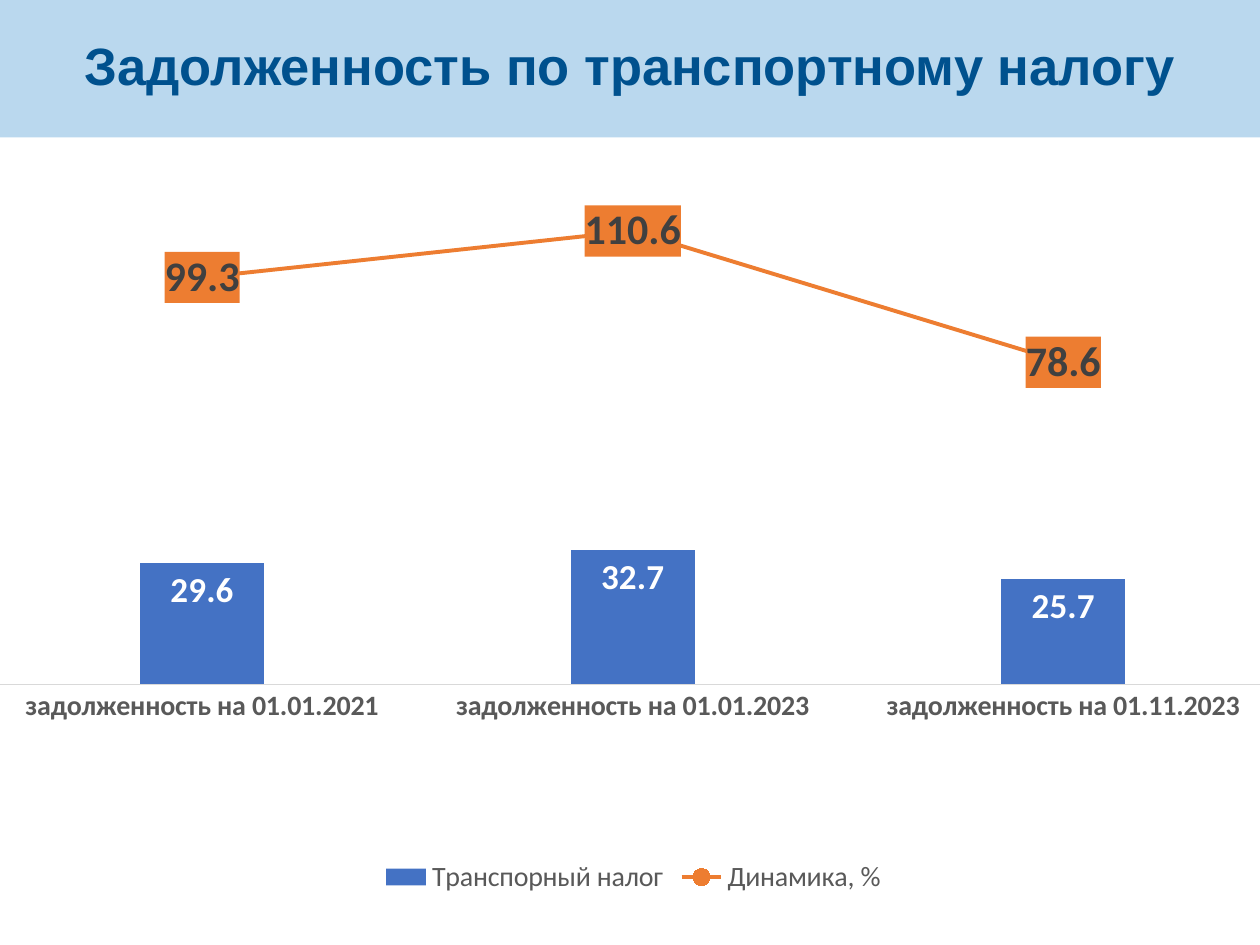
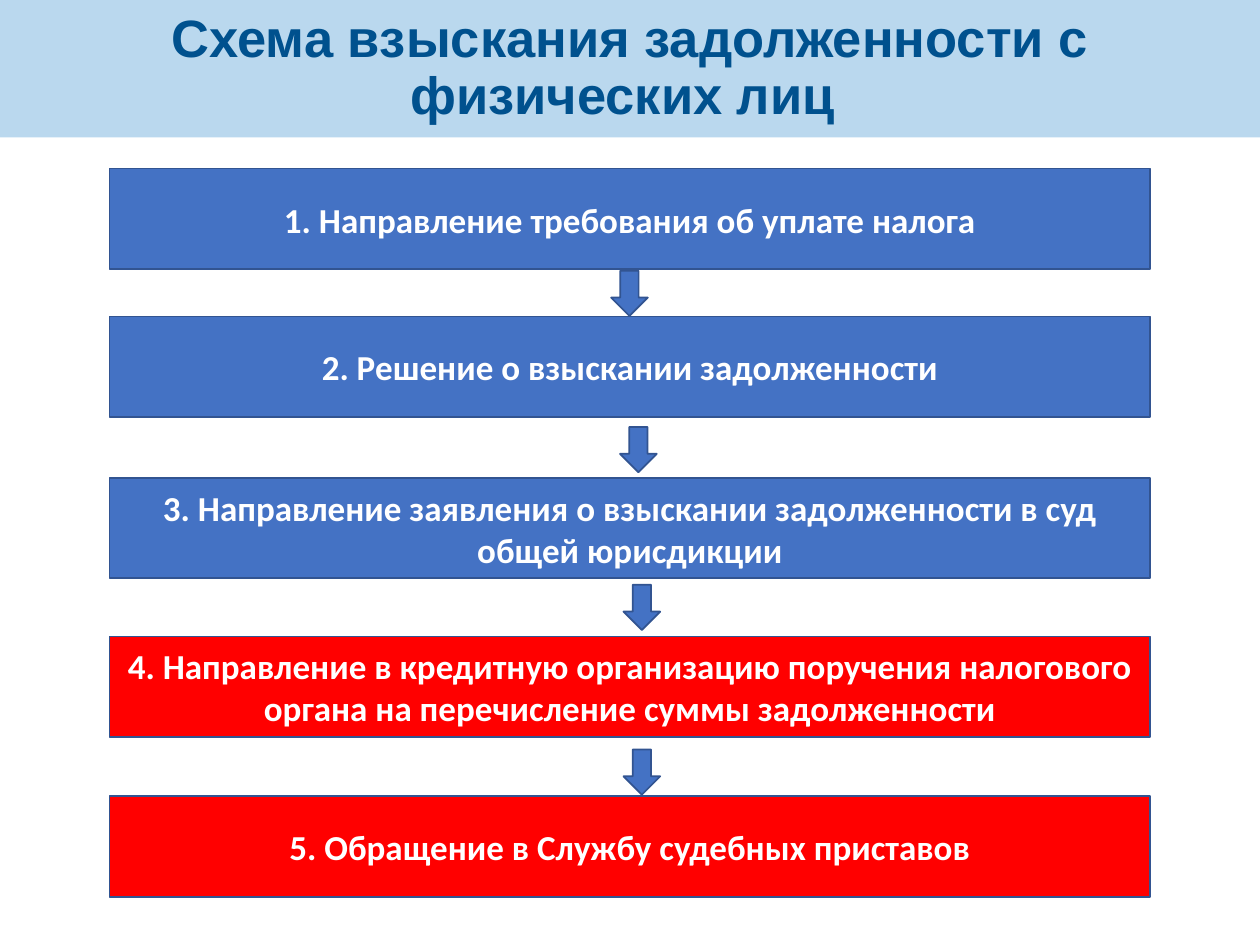
import pptx
import pptx.chart.data
import pptx.dml.color
import pptx.enum.chart
import pptx.enum.shapes
import pptx.enum.text
import pptx.oxml
import pptx.oxml.ns
import pptx.util

Cm, Pt = pptx.util.Cm, pptx.util.Pt
RGBColor = pptx.dml.color.RGBColor
MSO_SHAPE = pptx.enum.shapes.MSO_SHAPE
MSO_ANCHOR = pptx.enum.text.MSO_ANCHOR
PP_ALIGN = pptx.enum.text.PP_ALIGN
XL = pptx.enum.chart
qn = pptx.oxml.ns.qn

BAND = RGBColor(0xBA, 0xD8, 0xEE)
NAVY = RGBColor(0x00, 0x51, 0x8E)
BLUE = RGBColor(0x44, 0x72, 0xC4)
EDGE = RGBColor(0x32, 0x54, 0x91)
RED = RGBColor(0xFF, 0x00, 0x00)
ORANGE = RGBColor(0xED, 0x7D, 0x31)
WHITE = RGBColor(0xFF, 0xFF, 0xFF)
GRAY = RGBColor(0x59, 0x59, 0x59)
DARK = RGBColor(0x40, 0x40, 0x40)
PALE = RGBColor(0xD9, 0xD9, 0xD9)

SLIDE_WIDTH, SLIDE_HEIGHT = 25.4, 19.05
BAND_HEIGHT = 2.77
NAMESPACES = pptx.oxml.ns.nsdecls("c", "a")

CATEGORIES = [
    "задолженность на 01.01.2021",
    "задолженность на 01.01.2023",
    "задолженность на 01.11.2023",
]
DEBT = ("Транспорный налог", [29.6, 32.7, 25.7])
DYNAMICS = ("Динамика, %", [99.3, 110.6, 78.6])

# Step text, fill, top of the box within the scheme
STEPS = [
    ("1. Направление требования об уплате налога", BLUE, 0),
    ("2. Решение о взыскании задолженности", BLUE, 2.98),
    ("3. Направление заявления о взыскании задолженности в суд общей юрисдикции",
     BLUE, 6.23),
    ("4. Направление в кредитную организацию поручения налогового органа "
     "на перечисление суммы задолженности", RED, 9.43),
    ("5. Обращение в Службу судебных приставов", RED, 12.65),
]
# Left and top of each arrow within the scheme
ARROWS = [(10.11, 2.06), (10.29, 5.21), (10.36, 8.39), (10.36, 11.71)]


def style_font(font, size, color, bold=False, name="Calibri"):
    font.name, font.size, font.bold = name, Pt(size), bold
    font.color.rgb = color


def write(frame, text, size, color, name="Calibri"):
    frame.word_wrap = True
    frame.vertical_anchor = MSO_ANCHOR.MIDDLE
    para = frame.paragraphs[0]
    para.alignment = PP_ALIGN.CENTER
    span = para.add_run()
    span.text = text
    style_font(span.font, size, color, True, name)
    return para


def add_page(deck, heading):
    """Title-only page with the heading in a full-width band."""
    page = deck.slides.add_slide(deck.slide_layouts[5])
    title = page.shapes.title
    title.left, title.top = Cm(0), Cm(0)
    title.width, title.height = Cm(SLIDE_WIDTH), Cm(BAND_HEIGHT)
    title.fill.solid()
    title.fill.fore_color.rgb = BAND
    title.text_frame.auto_size = pptx.enum.text.MSO_AUTO_SIZE.NONE
    write(title.text_frame, heading, 30, NAVY, "Arial").line_spacing = 0.9
    return page


def add_block(page, kind, left, top, width, height, fill):
    block = page.shapes.add_shape(kind, Cm(left), Cm(top), Cm(width), Cm(height))
    block.shadow.inherit = False
    block.fill.solid()
    block.fill.fore_color.rgb = fill
    block.line.color.rgb = EDGE
    block.line.width = Pt(1)
    return block


def move_last_series_to_line(chart):
    """Put the last column series on a line that shares the same axes."""
    bars = chart.plots[0]._element
    line = pptx.oxml.parse_xml(
        f'<c:lineChart {NAMESPACES}><c:grouping val="stacked"/>'
        '<c:varyColors val="0"/><c:marker val="1"/></c:lineChart>')
    series = bars.findall(qn("c:ser"))[-1]
    for flag in series.findall(qn("c:invertIfNegative")):
        series.remove(flag)
    line.insert(2, series)
    for axis in bars.findall(qn("c:axId")):
        line.append(pptx.oxml.parse_xml(
            f'<c:axId {NAMESPACES} val="{axis.get("val")}"/>'))
    bars.addnext(line)


def place_plot(chart, left, top, width, height):
    """Fix the inner plot area, in fractions of the chart."""
    area = chart._chartSpace.chart.plotArea
    for layout in area.findall(qn("c:layout")):
        area.remove(layout)
    sizes = "".join(f'<c:{tag} val="{value}"/>' for tag, value in
                    zip("xywh", (left, top, width, height)))
    area.insert(0, pptx.oxml.parse_xml(
        f'<c:layout {NAMESPACES}><c:manualLayout><c:layoutTarget val="inner"/>'
        '<c:xMode val="edge"/><c:yMode val="edge"/>'
        f'{sizes}</c:manualLayout></c:layout>'))


def label_series(series, size, color, position):
    labels = series.data_labels
    labels.show_value = True
    labels.number_format, labels.number_format_is_linked = "0.0", False
    labels.position = position
    style_font(labels.font, size, color, True)
    return labels


def add_debt_chart(page, left, top, width, height):
    data = pptx.chart.data.CategoryChartData(number_format="0.0")
    data.categories = CATEGORIES
    for name, values in (DEBT, DYNAMICS):
        data.add_series(name, values)
    chart = page.shapes.add_chart(
        XL.XL_CHART_TYPE.COLUMN_CLUSTERED,
        Cm(left), Cm(top), Cm(width), Cm(height), data).chart
    chart.has_title = False
    style_font(chart.font, 10, RGBColor(0, 0, 0))
    move_last_series_to_line(chart)
    place_plot(chart, 0.014, 0.034, 0.971, 0.672)

    # Columns
    columns = chart.plots[0]
    columns.gap_width = 247
    columns.vary_by_categories = False
    debt = columns.series[0]
    debt.format.fill.solid()
    debt.format.fill.fore_color.rgb = BLUE
    label_series(debt, 20, WHITE, XL.XL_LABEL_POSITION.INSIDE_END)

    # Line with labels on an orange ground
    dynamics = chart.plots[1].series[0]
    dynamics.smooth = False
    dynamics.format.line.color.rgb = ORANGE
    dynamics.format.line.width = Pt(2.25)
    marker = dynamics.marker
    marker.style, marker.size = XL.XL_MARKER_STYLE.CIRCLE, 5
    marker.format.fill.solid()
    marker.format.fill.fore_color.rgb = ORANGE
    marker.format.line.color.rgb = ORANGE
    labels = label_series(dynamics, 24, DARK, XL.XL_LABEL_POSITION.CENTER)
    labels._element.find(qn("c:txPr")).addprevious(pptx.oxml.parse_xml(
        f'<c:spPr {NAMESPACES}><a:solidFill><a:srgbClr val="{ORANGE}"/>'
        '</a:solidFill></c:spPr>'))

    # Axes and legend
    dates, amounts = chart.category_axis, chart.value_axis
    dates.major_tick_mark = XL.XL_TICK_MARK.NONE
    dates.format.line.color.rgb = PALE
    dates.format.line.width = Pt(0.75)
    style_font(dates.tick_labels.font, 16, GRAY, True)
    amounts.has_major_gridlines = False
    amounts.minimum_scale, amounts.maximum_scale = 0, 120
    amounts.visible = False
    chart.has_legend = True
    chart.legend.position = XL.XL_LEGEND_POSITION.BOTTOM
    chart.legend.include_in_layout = False
    style_font(chart.legend.font, 16, GRAY)


def add_scheme(page, left, top, width, step_height):
    for text, fill, offset in STEPS:
        step = add_block(page, MSO_SHAPE.RECTANGLE,
                         left, top + offset, width, step_height, fill)
        write(step.text_frame, text, 20, WHITE)
    for across, down in ARROWS:
        add_block(page, MSO_SHAPE.DOWN_ARROW,
                  left + across, top + down, 0.74, 0.91, BLUE)


def main():
    deck = pptx.Presentation()
    deck.slide_width, deck.slide_height = Cm(SLIDE_WIDTH), Cm(SLIDE_HEIGHT)
    page = add_page(deck, "Задолженность по транспортному налогу")
    add_debt_chart(page, -0.64, 3.38, 26.82, 14.76)
    page = add_page(deck, "Схема взыскания задолженности с физических лиц ")
    add_scheme(page, 2.21, 3.4, 20.98, 2.03)
    deck.save("out.pptx")


if __name__ == "__main__":
    main()
